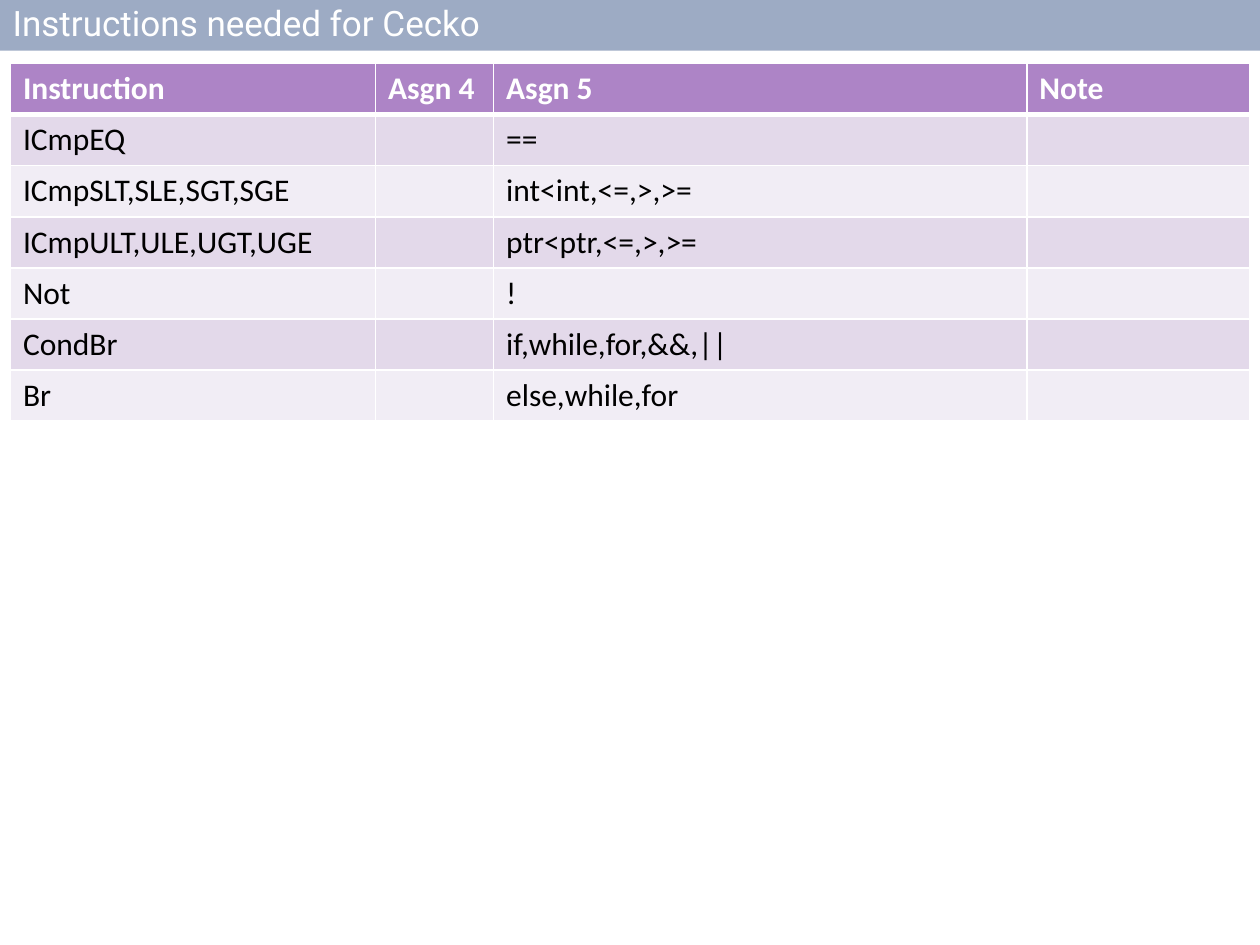
"""Build a slide with a table of the instructions needed for Cecko."""
from lxml.etree import SubElement
from pptx import Presentation
from pptx.dml.color import RGBColor
from pptx.enum.text import MSO_ANCHOR as Anchor, MSO_AUTO_SIZE as AutoSize, PP_ALIGN as Align
from pptx.oxml.ns import qn
from pptx.util import Cm, Pt

TITLE = "Instructions needed for Cecko"
HEADER = ("Instruction", "Asgn 4", "Asgn 5", "Note")
OPERATORS = {
    "ICmpEQ": "==",
    "ICmpSLT,SLE,SGT,SGE": "int<int,<=,>,>=",
    "ICmpULT,ULE,UGT,UGE": "ptr<ptr,<=,>,>=",
    "Not": "!",
    "CondBr": "if,while,for,&&,||",
    "Br": "else,while,for",
}
ROWS = [HEADER] + [(name, "", operators, "") for name, operators in OPERATORS.items()]
COLUMN_WIDTHS = (7.36, 2.38, 10.75, 4.5)
ROW_HEIGHT = 1.03
HEADER_FILL, BAND_FILLS = "AD84C6", ("F1EDF5", "E3D9EA")
TITLE_FONT = {"name": "Roboto", "size": Pt(20), "bold": False}
HEADER_FONT = {"name": "Calibri", "size": Pt(18), "bold": True}
BODY_FONT = HEADER_FONT | {"bold": False}


def paint(target, color):
    """Give a fill a solid colour."""
    target.solid()
    target.fore_color.rgb = RGBColor.from_string(color)


def write(frame, text, font, color):
    """Put formatted text in a frame and return its paragraph."""
    para = frame.paragraphs[0]
    para.text = text
    for target in (para.font, *(span.font for span in para.runs)):
        for key, value in font.items():
            setattr(target, key, value)
        paint(target.fill, color)
    return para


def add_borders(cell, widths):
    """Draw white lines on the named sides of a cell."""
    properties = cell._tc.get_or_add_tcPr()
    for side, width in widths.items():
        line = SubElement(properties, qn(f"a:ln{side}"), w=str(Pt(width)))
        SubElement(SubElement(line, qn("a:solidFill")), qn("a:srgbClr"), val="FFFFFF")


def add_title(page):
    """Format the title placeholder as a band across the top."""
    box = page.shapes.title
    box.left, box.top, box.width, box.height = Cm(0), Cm(0), Cm(25.4), Cm(1.02)
    paint(box.fill, "9DABC4")
    frame = box.text_frame
    frame.auto_size, frame.vertical_anchor = AutoSize.NONE, Anchor.MIDDLE
    para = write(frame, TITLE, TITLE_FONT, "FFFFFF")
    para.alignment, para.line_spacing = Align.LEFT, 0.9


def add_instructions(page):
    """Add the instruction table with a header and banded rows."""
    table = page.shapes.add_table(
        len(ROWS), len(HEADER), Cm(0.21), Cm(1.28),
        Cm(sum(COLUMN_WIDTHS)), Cm(ROW_HEIGHT * len(ROWS))).table
    for column, width in zip(table.columns, COLUMN_WIDTHS):
        column.width = Cm(width)
    for i, values in enumerate(ROWS):
        table.rows[i].height = Cm(ROW_HEIGHT)
        fill = BAND_FILLS[i % 2] if i else HEADER_FILL
        font, color = (BODY_FONT, "000000") if i else (HEADER_FONT, "FFFFFF")
        widths = {"L": 1, "R": 1, "T": 3 if i == 1 else 1, "B": 1 if i else 3}
        for cell, text in zip(table.rows[i].cells, values):
            add_borders(cell, widths)
            paint(cell.fill, fill)
            write(cell.text_frame, text, font, color)


def main():
    """Build and save the deck."""
    deck = Presentation()
    deck.slide_width, deck.slide_height = Cm(25.4), Cm(19.05)
    page = deck.slides.add_slide(deck.slide_layouts[5])
    add_title(page)
    add_instructions(page)
    deck.save("out.pptx")


if __name__ == "__main__":
    main()
